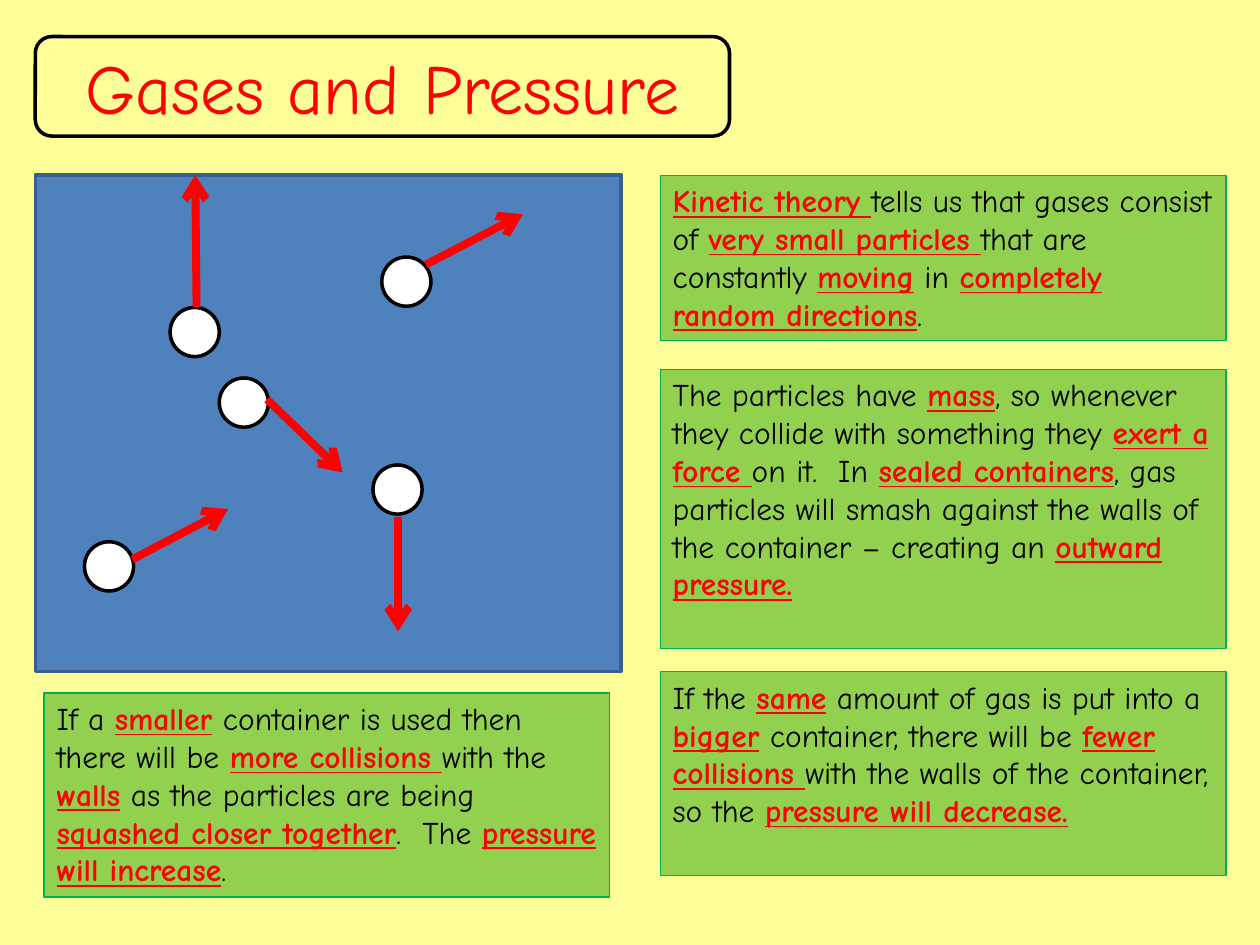
from lxml import etree
from pptx import Presentation
from pptx import util as u
from pptx.dml.color import RGBColor
from pptx.enum import shapes, text
from pptx.oxml.ns import qn

COLUMNS, ROWS = 100, 75
CELL = u.Inches(10) // COLUMNS
FONT = "Comic Neue"
COLORS = {
    "page": "FFFF99", "ink": "000000", "key": "FF0000", "particle": "FFFFFF",
    "gas": "4F81BD", "gas_edge": "3A5F8C", "note": "92D050", "note_edge": "00B050",
}

TITLE_BOX = (2.8, 2.9, 55.1, 7.9)
CONTAINER_BOX = (2.8, 13.9, 46.5, 39.4)
PARTICLE_SIZE = 3.9

# Each particle: position in container, arrow start on particle, arrow travel
PARTICLES = [
    ((10.7, 10.5), (2.1, 0), (-0.1, -10.5)),
    ((14.6, 16.1), (3.8, 1.7), (6, 5.8)),
    ((3.9, 29.1), (3.8, 1.4), (7.6, -4)),
    ((26.8, 23), (2, 4.1), (0, 9.1)),
    ((27.5, 6.5), (3.5, 0.6), (7.7, -4)),
]

NOTES = [
    ((52.4, 13.9, 44.9, 13.1),
     "*Kinetic theory *tells us that gases consist of *very small particles *"
     "that are constantly *moving* in *completely random directions*."),
    ((52.4, 29.3, 44.9, 22.2),
     "The particles have *mass*, so whenever they collide with something they "
     "*exert a force *on it.  In *sealed containers*, gas particles will smash "
     "against the walls of the container – creating an *outward pressure.*"),
    ((52.4, 53.3, 44.9, 16.2),
     "If the *same* amount of gas is put into a *bigger* container, there will be "
     "*fewer collisions *with the walls of the container, so the "
     "*pressure will decrease.*"),
    ((3.5, 55, 44.9, 16.2),
     "If a *smaller* container is used then there will be *more collisions *"
     "with the *walls* as the particles are being *squashed closer together*.  "
     "The *pressure will increase*."),
]


def rgb(name):
    return RGBColor.from_string(COLORS[name])


def cells(*counts):
    return [round(count * CELL) for count in counts]


def add_outlined(slide, preset, box, fill, edge, width):
    outlined = slide.shapes.add_shape(preset, *cells(*box))
    outlined.shadow.inherit = False
    outlined.fill.solid()
    outlined.fill.fore_color.rgb = rgb(fill)
    outlined.line.color.rgb = rgb(edge)
    outlined.line.width = u.Pt(width)
    return outlined


def add_words(paragraph, words, size, color, key=False):
    run = paragraph.add_run()
    run.text = words
    run.font.name = FONT
    run.font.size = u.Pt(size)
    run.font.color.rgb = rgb(color)
    run.font.bold = run.font.underline = key


def add_title(slide, box, words):
    banner = add_outlined(slide, shapes.MSO_SHAPE.ROUNDED_RECTANGLE, box, "page", "ink", 2)
    banner.text_frame.vertical_anchor = text.MSO_ANCHOR.MIDDLE
    heading = banner.text_frame.paragraphs[0]
    heading.alignment = text.PP_ALIGN.CENTER
    add_words(heading, words, 40, "key")


def add_motion(slide, start, travel):
    end = [origin + step for origin, step in zip(start, travel)]
    motion = slide.shapes.add_connector(
        shapes.MSO_CONNECTOR.STRAIGHT, *cells(*start, *end))
    motion.line.color.rgb = rgb("key")
    motion.line.width = u.Pt(4.5)
    etree.SubElement(motion.line._get_or_add_ln(), qn("a:tailEnd"), type="arrow")
    etree.SubElement(motion._element.spPr, qn("a:effectLst"))


def add_container(slide, box):
    add_outlined(slide, shapes.MSO_SHAPE.RECTANGLE, box, "gas", "gas_edge", 2)
    left, top = box[:2]
    motions = []
    for (x, y), (start_x, start_y), travel in PARTICLES:
        x, y = left + x, top + y
        add_outlined(slide, shapes.MSO_SHAPE.OVAL,
                     (x, y, PARTICLE_SIZE, PARTICLE_SIZE), "particle", "ink", 2)
        motions.append(((x + start_x, y + start_y), travel))
    for start, travel in motions:
        add_motion(slide, start, travel)


def add_note(slide, box, words):
    note = add_outlined(slide, shapes.MSO_SHAPE.RECTANGLE, box, "note", "note_edge", 0.75)
    frame = note.text_frame
    frame.word_wrap = True
    frame.auto_size = text.MSO_AUTO_SIZE.SHAPE_TO_FIT_TEXT
    frame.vertical_anchor = text.MSO_ANCHOR.TOP
    sentence = frame.paragraphs[0]
    sentence.alignment = text.PP_ALIGN.LEFT
    for index, part in enumerate(words.split("*")):
        key = index % 2 == 1
        if part:
            add_words(sentence, part, 18, "key" if key else "ink", key)


def main():
    deck = Presentation()
    deck.slide_width, deck.slide_height = cells(COLUMNS, ROWS)
    slide = deck.slides.add_slide(deck.slide_layouts[6])
    slide.background.fill.solid()
    slide.background.fill.fore_color.rgb = rgb("page")
    add_title(slide, TITLE_BOX, "Gases and Pressure")
    add_container(slide, CONTAINER_BOX)
    for box, words in NOTES:
        add_note(slide, box, words)
    deck.save("out.pptx")


if __name__ == "__main__":
    main()
